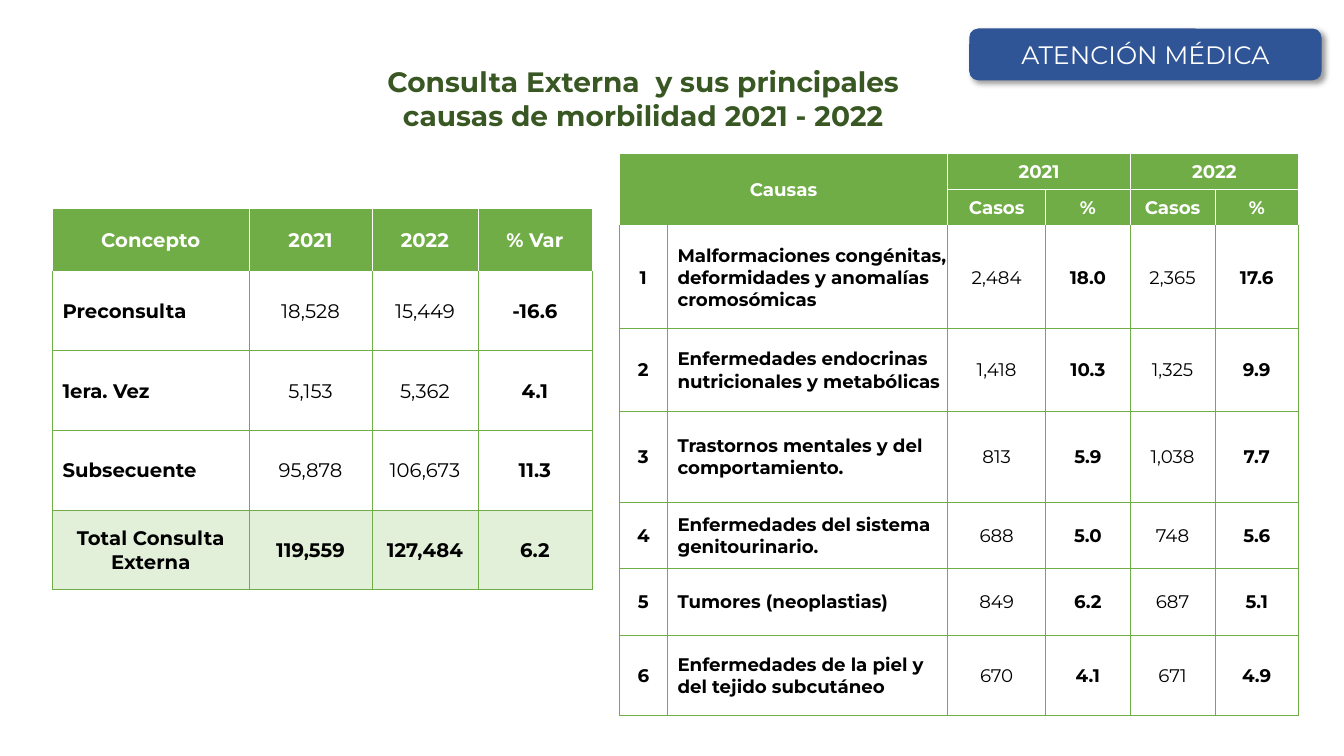
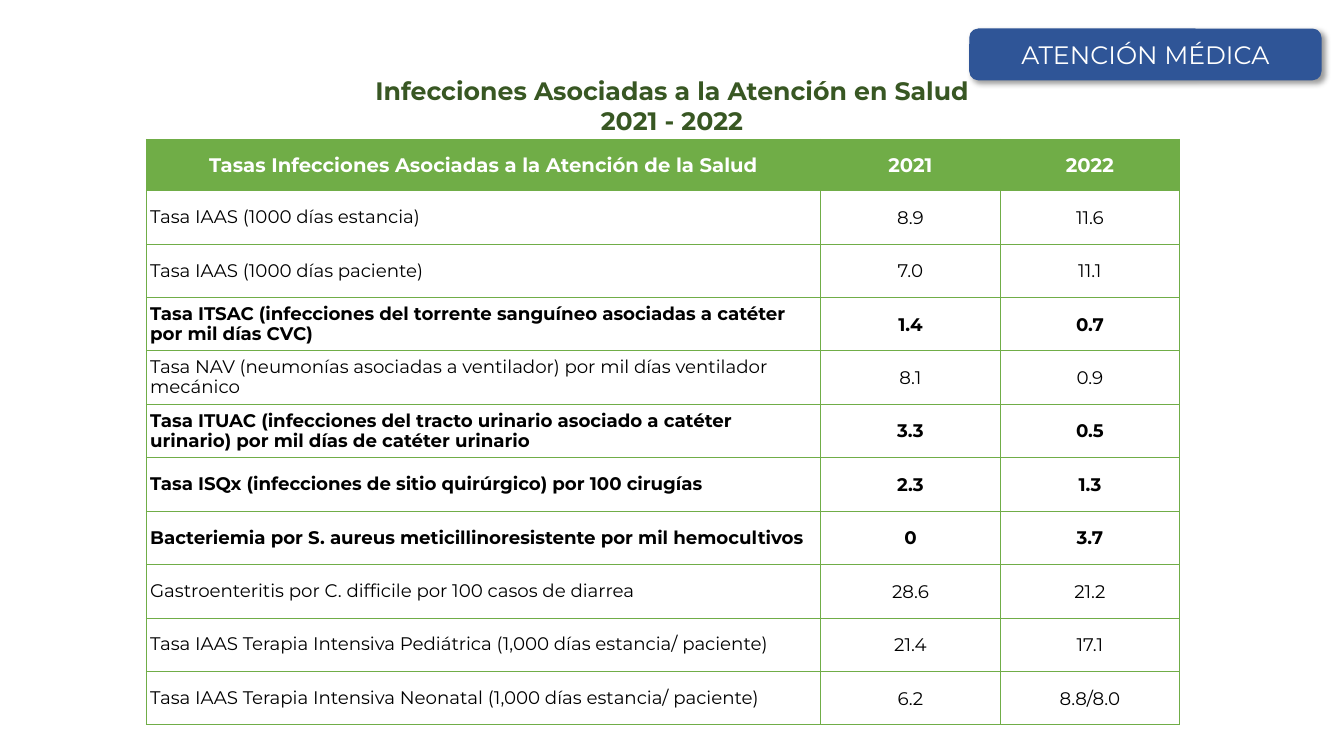
from dataclasses import dataclass, replace
from typing import NamedTuple

from lxml.etree import SubElement
from pptx import Presentation
from pptx.dml.color import RGBColor
from pptx.enum.shapes import MSO_SHAPE
from pptx.enum.text import MSO_ANCHOR, MSO_AUTO_SIZE, PP_ALIGN
from pptx.oxml import parse_xml
from pptx.oxml.ns import nsdecls, qn
from pptx.util import Inches, Pt

FONT = "Montserrat"
COLORS = {
    "green": "70AD47",
    "pale": "E2F0D9",
    "title": "385723",
    "blue": "2F5597",
    "white": "FFFFFF",
    "black": "000000",
}


@dataclass(frozen=True)
class Look:
    fill: str = "white"
    color: str = "black"
    border: str = "green"
    bold: bool = False
    align: PP_ALIGN = PP_ALIGN.CENTER
    indent: float = 0
    side_margin: float = 0.01
    line_spacing: float = 1.0


class Row(NamedTuple):
    height: float
    texts: tuple[str, ...]
    looks: tuple[Look, ...]


class Merge(NamedTuple):
    top: int
    left: int
    bottom: int
    right: int


@dataclass(frozen=True)
class TableSpec:
    left: float
    top: float
    widths: tuple[float, ...]
    rows: list[Row]
    merges: tuple[Merge, ...] = ()


NUMBER = Look()
STRONG = replace(NUMBER, bold=True)
LABEL = replace(STRONG, align=PP_ALIGN.LEFT, indent=0.1, side_margin=0)
TOTAL = replace(STRONG, fill="pale")
PLAIN_HEADER = replace(STRONG, fill="green", color="white")
HEADER = replace(PLAIN_HEADER, border="white")
RATE_LABEL = replace(NUMBER, align=PP_ALIGN.LEFT, side_margin=0.04, line_spacing=0.9)

VISIT_LOOKS = (LABEL, NUMBER, NUMBER, STRONG)
VISITS = TableSpec(0.52, 2.07, (1.95, 1.22, 1.05, 1.13), [
    Row(0.62, ("Concepto", "2021", "2022", "% Var"), (HEADER,) * 4),
    Row(0.79, ("Preconsulta", "18,528", "15,449", "-16.6"), VISIT_LOOKS),
    Row(0.79, ("1era. Vez", "5,153", "5,362", "4.1"), VISIT_LOOKS),
    Row(0.79, ("Subsecuente", "95,878", "106,673", "11.3"), VISIT_LOOKS),
    Row(0.79, ("Total Consulta\nExterna", "119,559", "127,484", "6.2"), (TOTAL,) * 4),
])

CAUSE_LOOKS = (STRONG, LABEL, NUMBER, STRONG, NUMBER, STRONG)
CAUSES = (
    (1.02, "Malformaciones congénitas, deformidades y anomalías cromosómicas",
     "2,484", "18.0", "2,365", "17.6"),
    (0.82, "Enfermedades endocrinas nutricionales y metabólicas",
     "1,418", "10.3", "1,325", "9.9"),
    (0.9, "Trastornos mentales y del comportamiento.", "813", "5.9", "1,038", "7.7"),
    (0.66, "Enfermedades del sistema genitourinario.", "688", "5.0", "748", "5.6"),
    (0.66, "Tumores (neoplastias)", "849", "6.2", "687", "5.1"),
    (0.8, "Enfermedades de la piel y del tejido subcutáneo", "670", "4.1", "671", "4.9"),
)
MORBIDITY = TableSpec(
    6.14, 1.52, (0.48, 2.78, 0.97, 0.84, 0.84, 0.83),
    [
        Row(0.36, ("Causas", "", "2021", "", "2022", ""), (HEADER,) * 6),
        Row(0.36, ("", "", "Casos", "%", "Casos", "%"), (HEADER,) * 6),
        *(Row(height, (str(rank), *texts), CAUSE_LOOKS)
          for rank, (height, *texts) in enumerate(CAUSES, start=1)),
    ],
    (Merge(0, 0, 1, 1), Merge(0, 2, 0, 3), Merge(0, 4, 0, 5)),
)

RATES = (
    ("Tasa IAAS (1000 días estancia)", "8.9", "11.6", False),
    ("Tasa IAAS (1000 días paciente)", "7.0", "11.1", False),
    ("Tasa ITSAC (infecciones del torrente sanguíneo asociadas a catéter por mil días CVC)",
     "1.4", "0.7", True),
    ("Tasa NAV (neumonías asociadas a ventilador) por mil días ventilador mecánico",
     "8.1", "0.9", False),
    ("Tasa ITUAC (infecciones del tracto urinario asociado a catéter urinario) "
     "por mil días de catéter urinario", "3.3", "0.5", True),
    ("Tasa ISQx (infecciones de sitio quirúrgico) por 100 cirugías", "2.3", "1.3", True),
    ("Bacteriemia por S. aureus meticillinoresistente por mil hemocultivos",
     "0", "3.7", True),
    ("Gastroenteritis por C. difficile por 100 casos de diarrea", "28.6", "21.2", False),
    ("Tasa IAAS Terapia Intensiva Pediátrica (1,000 días estancia/ paciente)",
     "21.4", "17.1", False),
    ("Tasa IAAS Terapia Intensiva Neonatal (1,000 días estancia/ paciente)",
     "6.2", "8.8/8.0", False),
)
INFECTIONS = TableSpec(1.45, 1.38, (6.69, 1.78, 1.78), [
    Row(0.51, ("Tasas Infecciones Asociadas a la Atención de la Salud", "2021", "2022"),
        (PLAIN_HEADER,) * 3),
    *(Row(0.53, tuple(texts),
          tuple(replace(look, bold=bold) for look in (RATE_LABEL, NUMBER, NUMBER)))
      for *texts, bold in RATES),
])


def rgb(name: str) -> RGBColor:
    return RGBColor.from_string(COLORS[name])


def style_paragraph(para, size: float, color: str, bold: bool, align: PP_ALIGN) -> None:
    para.alignment = align
    para.font.name = FONT
    para.font.size = Pt(size)
    para.font.bold = bold
    para.font.color.rgb = rgb(color)


def set_borders(cell, side: str, top: str) -> None:
    """Draw the four edges; the top one takes the colour of the row above."""
    properties = cell._tc.get_or_add_tcPr()
    edges = (("lnL", side), ("lnR", side), ("lnT", top), ("lnB", side))
    for position, (tag, color) in enumerate(edges):
        properties.insert(position, parse_xml(
            f'<a:{tag} {nsdecls("a")} w="6350"><a:solidFill>'
            f'<a:srgbClr val="{COLORS[color]}"/></a:solidFill></a:{tag}>'))


def fill_cell(cell, text: str, look: Look, size: float, top_border: str) -> None:
    cell.margin_left = cell.margin_right = Inches(look.side_margin)
    cell.margin_top, cell.margin_bottom = Inches(0.01), 0
    cell.vertical_anchor = MSO_ANCHOR.MIDDLE
    cell.fill.solid()
    cell.fill.fore_color.rgb = rgb(look.fill)
    set_borders(cell, look.border, top_border)
    cell.text_frame.text = text
    for para in cell.text_frame.paragraphs:
        if look.indent:
            para._p.get_or_add_pPr().set("marL", str(Inches(look.indent)))
        para.line_spacing = look.line_spacing
        style_paragraph(para, size, look.color, look.bold, look.align)


def add_data_table(page, spec: TableSpec, header_size: float, body_size: float) -> None:
    table = page.shapes.add_table(
        len(spec.rows), len(spec.widths), Inches(spec.left), Inches(spec.top),
        Inches(sum(spec.widths)), Inches(sum(row.height for row in spec.rows))).table
    table.first_row = table.horz_banding = False
    for column, width in zip(table.columns, spec.widths):
        column.width = Inches(width)
    for row_index, row in enumerate(spec.rows):
        table.rows[row_index].height = Inches(row.height)
        above = spec.rows[max(row_index - 1, 0)]
        for column_index, (text, look) in enumerate(zip(row.texts, row.looks)):
            size = header_size if look.fill == "green" else body_size
            fill_cell(table.cell(row_index, column_index), text, look, size,
                      above.looks[column_index].border)
    for merge in spec.merges:
        table.cell(merge.top, merge.left).merge(table.cell(merge.bottom, merge.right))


def add_title(page, text: str, left: float, top: float, width: float, height: float,
              size: float) -> None:
    box = page.shapes.add_shape(MSO_SHAPE.ROUND_2_DIAG_RECTANGLE, Inches(left),
                                Inches(top), Inches(width), Inches(height))
    box.shadow.inherit = False
    box.fill.background()
    box.line.fill.background()
    frame = box.text_frame
    frame.word_wrap = True
    frame.auto_size = MSO_AUTO_SIZE.SHAPE_TO_FIT_TEXT
    frame.vertical_anchor = MSO_ANCHOR.TOP
    frame.text = text
    for para in frame.paragraphs:
        style_paragraph(para, size, "title", True, PP_ALIGN.CENTER)


def add_section_badge(page) -> None:
    badge = page.shapes.add_shape(MSO_SHAPE.ROUNDED_RECTANGLE, Inches(9.62),
                                  Inches(0.29), Inches(3.48), Inches(0.5))
    badge.fill.solid()
    badge.fill.fore_color.rgb = badge.line.color.rgb = rgb("blue")
    badge.line.width = Pt(1)
    badge.shadow.inherit = False
    effects = badge._element.spPr.find(qn("a:effectLst"))
    shadow = SubElement(effects, qn("a:outerShdw"), blurRad=str(Pt(4)), dist=str(Pt(3)),
                        dir="2700000", algn="tl", rotWithShape="0")
    tint = SubElement(shadow, qn("a:srgbClr"), val=COLORS["black"])
    SubElement(tint, qn("a:alpha"), val="40000")
    frame = badge.text_frame
    frame.vertical_anchor = MSO_ANCHOR.MIDDLE
    frame.text = "ATENCIÓN MÉDICA"
    style_paragraph(frame.paragraphs[0], 18, "white", False, PP_ALIGN.CENTER)


def main() -> None:
    deck = Presentation()
    deck.slide_width, deck.slide_height = Inches(13.33), Inches(7.5)
    blank = deck.slide_layouts[6]

    page = deck.slides.add_slide(blank)
    add_data_table(page, VISITS, 14, 14)
    add_data_table(page, MORBIDITY, 13, 13)
    add_title(page, "Consulta Externa  y sus principales causas de morbilidad 2021 - 2022",
              3.4, 0.55, 5.96, 0.86, 20)
    add_section_badge(page)

    page = deck.slides.add_slide(blank)
    add_data_table(page, INFECTIONS, 14, 13)
    add_title(page, "Infecciones Asociadas a la Atención en Salud\n2021 - 2022",
              3.44, 0.66, 6.45, 0.78, 18)
    add_section_badge(page)

    deck.save("out.pptx")


if __name__ == "__main__":
    main()
